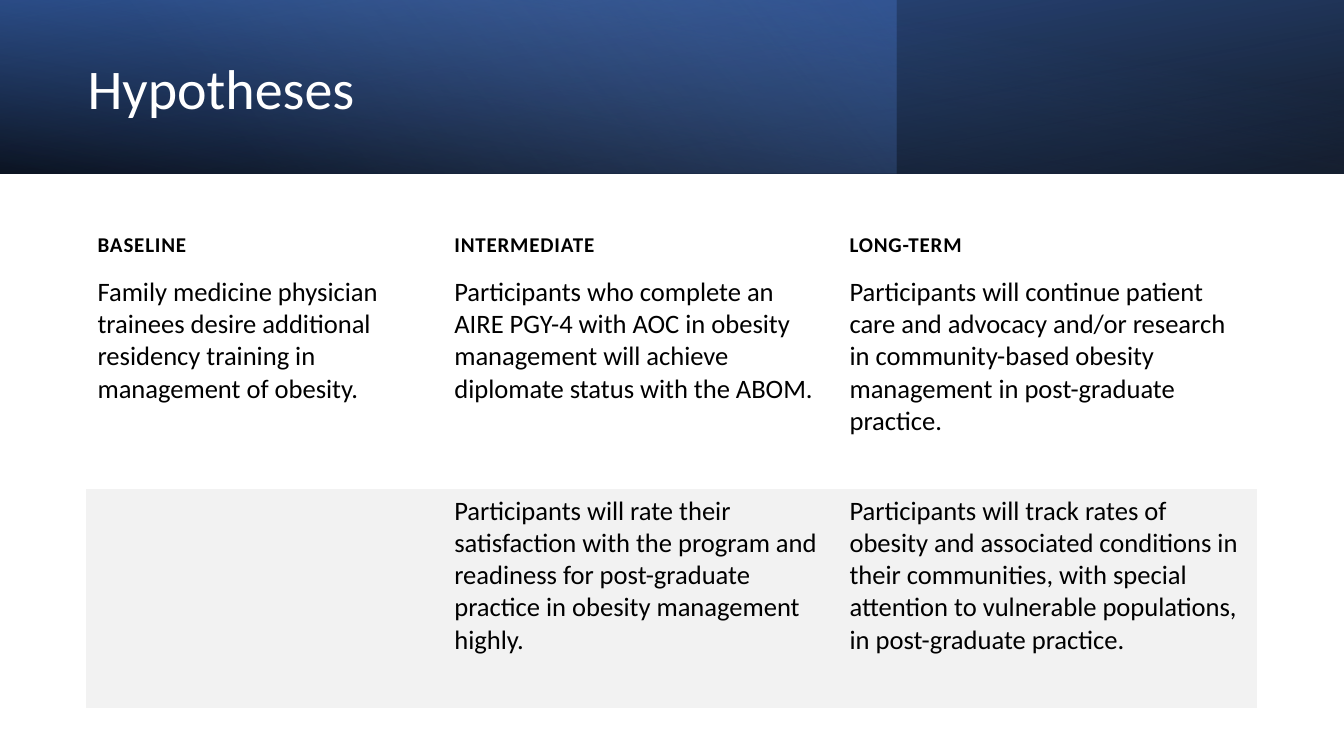
from lxml.etree import SubElement
from pptx import Presentation
from pptx.dml.color import RGBColor
from pptx.enum.shapes import MSO_SHAPE
from pptx.enum.text import MSO_ANCHOR
from pptx.oxml.ns import qn
from pptx.util import Cm, Pt

FONT = "Calibri"
NO_GRID_STYLE = "{2D5ABB26-0587-4C30-8999-92F81FD0307C}"
SLIDE_WIDTH, SLIDE_HEIGHT = 33.87, 19.05
COLUMN_WIDTHS = (8.99, 9.96, 10.57)
HEADING_HEIGHT, BODY_HEIGHT = 1.35, 5.51

STAGES = ("BASELINE", "INTERMEDIATE", "LONG-TERM")
HYPOTHESES = (
    (
        "Family medicine physician trainees desire additional residency "
        "training in management of obesity.",
        "Participants who complete an AIRE PGY-4 with AOC in obesity "
        "management will achieve diplomate status with the ABOM.",
        "Participants will continue patient care and advocacy and/or research "
        "in community-based obesity management in post-graduate practice.",
    ),
    (
        "",
        "Participants will rate their satisfaction with the program and "
        "readiness for post-graduate practice in obesity management highly.",
        "Participants will track rates of obesity and associated conditions in "
        "their communities, with special attention to vulnerable populations, "
        "in post-graduate practice.",
    ),
)


def color(hex_code):
    return RGBColor.from_string(hex_code)


def add_run(paragraph, text, size, hex_code, bold=False, spacing=0):
    run = paragraph.add_run()
    run.text = text
    run.font.name = FONT
    run.font.size = Pt(size)
    run.font.bold = bold
    run.font.color.rgb = color(hex_code)
    if spacing:
        run.font._element.set("spc", str(round(spacing * 100)))


def add_gradient(slide, left, top, width, height, stops, angle, flip=False, turn=0):
    """Stops are (position %, colour, opacity %)."""
    layer = slide.shapes.add_shape(
        MSO_SHAPE.RECTANGLE, Cm(left), Cm(top), Cm(width), Cm(height))
    layer.shadow.inherit = False
    layer.line.fill.background()
    layer.rotation = turn
    properties = layer._element.spPr
    if flip:
        properties.xfrm.set("flipH", "1")

    layer.fill.gradient()
    gradient = properties.find(qn("a:gradFill"))
    for child in list(gradient):
        gradient.remove(child)
    stop_list = SubElement(gradient, qn("a:gsLst"))
    for position, hex_code, opacity in stops:
        stop = SubElement(stop_list, qn("a:gs"), pos=str(position * 1000))
        tint = SubElement(stop, qn("a:srgbClr"), val=hex_code)
        SubElement(tint, qn("a:alpha"), val=str(opacity * 1000))
    SubElement(gradient, qn("a:lin"), ang=str(angle * 60000), scaled="0")


def add_banner(slide, left, top, width, height):
    # Layered gradients
    add_gradient(slide, left, top, width, height,
                 [(0, "000000", 96), (100, "2F5597", 100)], 100, flip=True, turn=180)
    add_gradient(slide, left, top, width * 2 / 3, height,
                 [(0, "4472C4", 41), (74, "8FAADC", 0)], 140)
    add_gradient(slide, left, top, width, height,
                 [(0, "000000", 63), (78, "4472C4", 15)], 260, flip=True)

    # Title
    title = slide.shapes.add_textbox(
        Cm(left + 1.96), Cm(top + 0.69), Cm(19.6), Cm(3.23)).text_frame
    title.word_wrap = True
    title.vertical_anchor = MSO_ANCHOR.MIDDLE
    title.paragraphs[0].line_spacing = 0.9
    add_run(title.paragraphs[0], "Hypotheses", 40, "FFFFFF")


def fill_cell(cell, text, heading, shade):
    cell.margin_left = cell.margin_right = cell.margin_bottom = Cm(0.3)
    cell.margin_top = Cm(0.3 if heading else 0.15)
    cell.vertical_anchor = MSO_ANCHOR.BOTTOM if heading else MSO_ANCHOR.TOP
    if shade:
        cell.fill.solid()
        cell.fill.fore_color.rgb = color(shade)
    else:
        cell.fill.background()
    if text:
        paragraph = cell.text_frame.paragraphs[0]
        if heading:
            add_run(paragraph, text, 15, "000000", bold=True, spacing=0.6)
        else:
            add_run(paragraph, text, 19, "000000")


def add_hypotheses(slide, left, top, width, height):
    rows = (STAGES, *HYPOTHESES)
    hypotheses = slide.shapes.add_table(
        len(rows), len(STAGES), Cm(left), Cm(top), Cm(width), Cm(height)).table
    hypotheses.horz_banding = False
    hypotheses._tbl.tblPr.find(qn("a:tableStyleId")).text = NO_GRID_STYLE

    for column, column_width in zip(hypotheses.columns, COLUMN_WIDTHS):
        column.width = Cm(column_width)
    for row_index, texts in enumerate(rows):
        heading = row_index == 0
        hypotheses.rows[row_index].height = Cm(HEADING_HEIGHT if heading else BODY_HEIGHT)
        shade = "F2F2F2" if row_index == len(rows) - 1 else None
        for column_index, text in enumerate(texts):
            fill_cell(hypotheses.cell(row_index, column_index), text, heading, shade)


def main():
    deck = Presentation()
    deck.slide_width, deck.slide_height = Cm(SLIDE_WIDTH), Cm(SLIDE_HEIGHT)
    slide = deck.slides.add_slide(deck.slide_layouts[6])
    add_banner(slide, 0, 0, SLIDE_WIDTH, 4.38)
    add_hypotheses(slide, 2.16, 5.46, sum(COLUMN_WIDTHS),
                   HEADING_HEIGHT + len(HYPOTHESES) * BODY_HEIGHT)
    deck.save("out.pptx")


if __name__ == "__main__":
    main()
